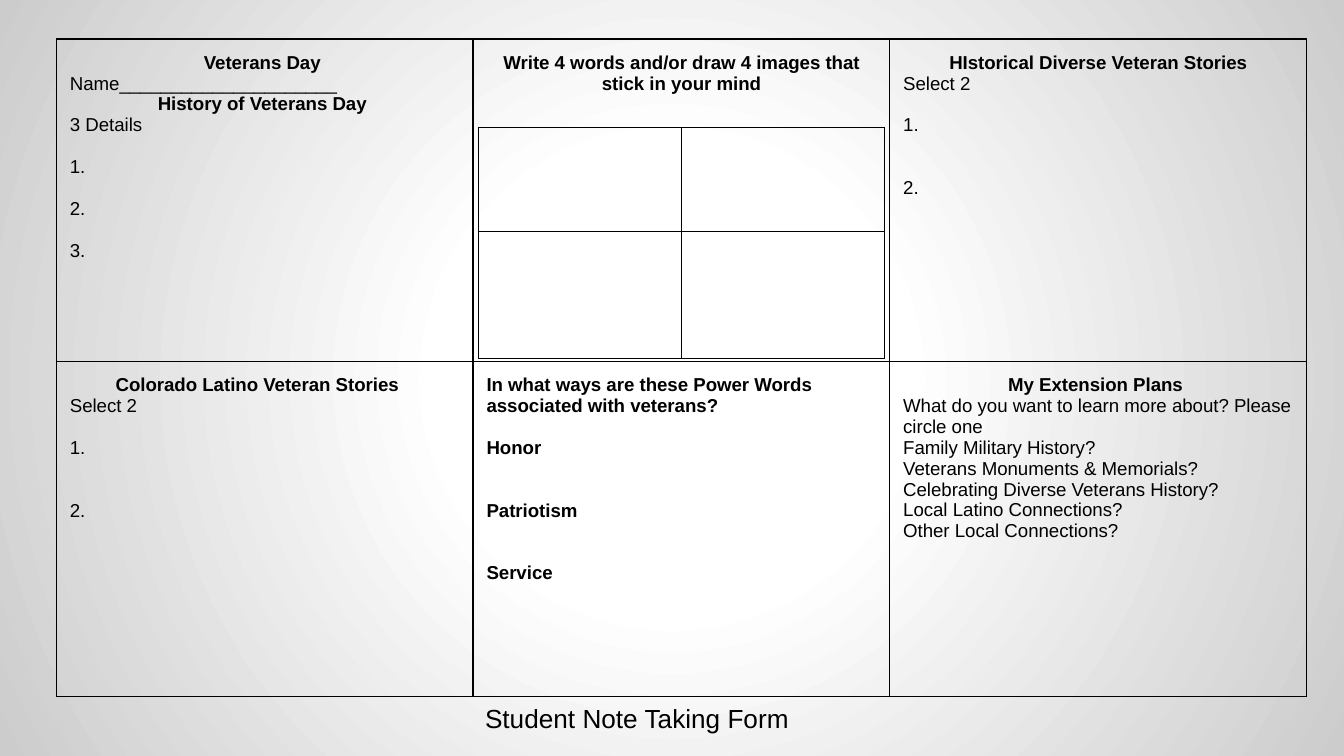
import pptx
import pptx.util
import pptx.oxml
import pptx.dml.color
import pptx.enum.text

Inches, Pt = pptx.util.Inches, pptx.util.Pt
ALIGN = pptx.enum.text.PP_ALIGN
NAMESPACE = "http://schemas.openxmlformats.org/drawingml/2006/main"
COLORS = {"ink": "000000", "center": "FFFFFF", "edge": "CCCCCC"}
LINE = 11.2  # points left for each empty writing line

# Each line: text, style letters (b bold, c centered, i indented), empty lines above
CELLS = [
    [
        [("Veterans Day ", "bc", 0), ("Name_____________________", "", 0),
         ("History of Veterans Day ", "bc", 0), ("3 Details", "", 0),
         ("1.", "", 1), ("2.", "", 1), ("3.", "", 1)],
        [("Write 4 words and/or draw 4 images that stick in your mind", "bc", 0)],
        [("HIstorical Diverse Veteran Stories", "bc", 0), ("Select 2", "", 0),
         ("1.", "", 1), ("2.", "", 2)],
    ],
    [
        [("Colorado Latino Veteran Stories", "bi", 0), ("Select 2", "", 0),
         ("1.", "", 1), ("2.", "", 2)],
        [("In what ways are these Power Words associated with veterans?", "b", 0),
         ("Honor", "b", 1), ("Patriotism", "b", 2), ("Service", "b", 2)],
        [("My Extension Plans ", "bc", 0),
         ("What do you want to learn more about? Please circle one", "", 0),
         ("Family Military History?", "", 0), ("Veterans Monuments & Memorials?", "", 0),
         ("Celebrating Diverse Veterans History?", "", 0),
         ("Local Latino Connections?", "", 0), ("Other Local Connections?", "", 0)],
    ],
]


def add_outlined_table(slide, left, top, column_width, row_heights, columns):
    """Add an unfilled table with thin lines around every cell."""
    rows = len(row_heights)
    table = slide.shapes.add_table(
        rows, columns, Inches(left), Inches(top),
        Inches(column_width * columns), Inches(sum(row_heights))).table
    table.first_row = False
    table.horz_banding = False
    for column in table.columns:
        column.width = Inches(column_width)
    for row, height in zip(table.rows, row_heights):
        row.height = Inches(height)
    for cell in table.iter_cells():
        cell.margin_left = cell.margin_right = Inches(0.1)
        cell.margin_top = cell.margin_bottom = Inches(0.1)
        cell.fill.background()
        properties = cell._tc.get_or_add_tcPr()
        for index, side in enumerate(("lnL", "lnR", "lnT", "lnB")):
            properties.insert(index, pptx.oxml.parse_xml(
                f'<a:{side} xmlns:a="{NAMESPACE}" w="{Pt(0.75)}"><a:solidFill>'
                f'<a:srgbClr val="{COLORS["ink"]}"/></a:solidFill></a:{side}>'))
    return table


def style_font(font, size, bold=False):
    font.name = "Arial"
    font.size = Pt(size)
    font.bold = bold
    font.color.rgb = pptx.dml.color.RGBColor.from_string(COLORS["ink"])


presentation = pptx.Presentation()
presentation.slide_width = Inches(10)
presentation.slide_height = Inches(10 * 9 / 16)
slide = presentation.slides.add_slide(presentation.slide_layouts[6])

# Radial background
slide.background.fill.gradient()
gradient = slide._element.find(f".//{{{NAMESPACE}}}gradFill")
stops = "".join(
    f'<a:gs pos="{position * 1000}"><a:srgbClr val="{COLORS[name]}"/></a:gs>'
    for position, name in ((0, "center"), (30, "center"), (100, "edge")))
gradient.getparent().replace(gradient, pptx.oxml.parse_xml(
    f'<a:gradFill xmlns:a="{NAMESPACE}"><a:gsLst>{stops}</a:gsLst><a:path path="circle">'
    '<a:fillToRect l="50000" t="50000" r="50000" b="50000"/></a:path></a:gradFill>'))

# Form title
title = slide.shapes.add_textbox(Inches(1.55), Inches(5.15), Inches(6.38), Inches(0.39))
frame = title.text_frame
frame.word_wrap = True
frame.vertical_anchor = pptx.enum.text.MSO_ANCHOR.MIDDLE
frame.margin_left = frame.margin_right = Inches(0.1)
frame.margin_top = frame.margin_bottom = Inches(0.1)
paragraph = frame.paragraphs[0]
paragraph.text = "Student Note Taking Form"
paragraph.alignment = ALIGN.CENTER
style_font(paragraph.font, 14)

# Note-taking grid
notes = add_outlined_table(slide, 0.42, 0.29, 3.1, [2.4, 2.49], 3)
for row_index, row in enumerate(CELLS):
    for column_index, lines in enumerate(row):
        frame = notes.cell(row_index, column_index).text_frame
        for line_index, (text, style, empty_lines) in enumerate(lines):
            paragraph = frame.add_paragraph() if line_index else frame.paragraphs[0]
            paragraph.text = text
            paragraph.alignment = ALIGN.CENTER if "c" in style else ALIGN.LEFT
            paragraph.space_before = Pt(LINE * empty_lines)
            style_font(paragraph.font, 10, "b" in style)
            if "i" in style:
                paragraph._p.get_or_add_pPr().set("marL", str(Inches(0.34)))

# Boxes for four words or drawings
add_outlined_table(slide, 3.56, 0.95, 1.51, [0.77, 0.95], 2)

presentation.save("out.pptx")
